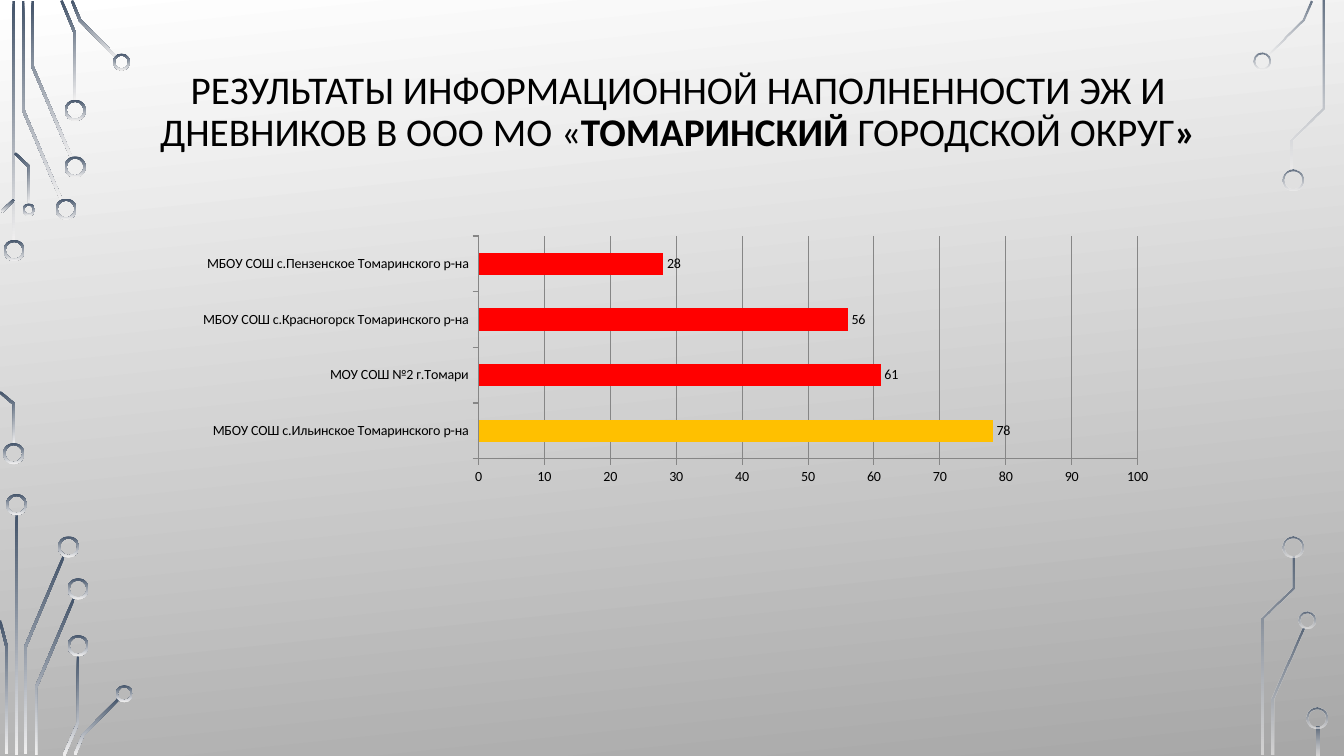
import math
from lxml import etree
from pptx import Presentation
from pptx import util as u
from pptx.chart import data as chart_data
from pptx.dml.color import RGBColor
from pptx.enum import chart as ch, shapes, text
from pptx.oxml import parse_xml
from pptx.oxml.ns import nsdecls, qn

THEME = {
    "font": "Calibri", "title_size": 28, "chart_size": 10, "ink": "000000",
    "grid": "868686", "low": "FF0000", "middle": "FFC000",
    "backdrop": ("FFFFFF", "A7A7A7"), "circuit": ("44546A", "F1F0F0"),
}
TITLE = [
    ("РЕЗУЛЬТАТЫ ИНФОРМАЦИОННОЙ НАПОЛНЕННОСТИ ЭЖ И ДНЕВНИКОВ В ООО МО «", False),
    ("ТОМАРИНСКИЙ", True), (" ГОРОДСКОЙ ОКРУГ", False), ("»", True),
]
SCHOOLS = [
    ("МБОУ СОШ с.Ильинское Томаринского р-на", 78),
    ("МОУ СОШ №2 г.Томари", 61),
    ("МБОУ СОШ с.Красногорск Томаринского р-на", 56),
    ("МБОУ СОШ с.Пензенское Томаринского р-на", 28),
]
LOW_LIMIT = 70
TITLE_BOX = (94.3, 35.3, 779.8, 90.7)
CHART_BOX = (131, 164.9, 702.7, 185)
PLOT_SHARE = {"x": 0.3, "y": 0.02, "w": 0.67, "h": 0.86}
TRACE_WIDTH, RING_WIDTH = 1.8, 1.45
BIG, SMALL, TINY = 15.1, 12.2, 9

LEFT_TRACES = [
    [(9.7, 0.7), (9.7, 172.8)],
    [(16.6, 0.7), (16.6, 78.5), (43.9, 142.9)],
    [(23.4, 0.7), (23.4, 47.9), (51.1, 112.7)],
    [(43.9, 0.4), (53.6, 23.8), (53.6, 72)],
    [(51.5, 0.4), (57.2, 14.6), (83.2, 41)],
    [(1.1, 151.2), (10.1, 142.6)],
    [(0, 280.1), (10.1, 288.7), (10.1, 317.5)],
    [(10.8, 109.4), (20.9, 119.2), (20.9, 146.2)],
    [(11.9, 367.2), (11.9, 539.3)],
    [(18.4, 538.6), (18.4, 461.5), (45.7, 397.1)],
    [(4.7, 538.6), (4.7, 461.5), (0, 443.2)],
    [(25.6, 539.3), (25.6, 491.4), (52.9, 427.3)],
    [(45.7, 539.6), (55.8, 516.2), (55.8, 468)],
    [(53.6, 538.9), (59.4, 524.9), (85, 499)],
]
LEFT_RINGS = [
    (10.1, 178.9, BIG), (9.8, 324, BIG), (47.2, 149.4, BIG), (53.7, 119.2, BIG),
    (53.7, 78.8, BIG), (86.8, 44.3, SMALL), (20.6, 149.8, TINY), (11.8, 360.4, BIG),
    (49, 390.6, BIG), (55.8, 420.6, BIG), (55.8, 461.2, BIG), (88.8, 495.5, SMALL),
]
RIGHT_TRACES = [
    [(905, 40), (930.6, 14), (936.4, 0.4)],
    [(909, 539.3), (909, 499.3), (931, 448.9)],
    [(923, 121.7), (923, 99.7), (945, 77.4), (945, 0.7)],
    [(901.8, 539.3), (901.8, 441.7), (924.1, 420.1), (924.1, 397.4)],
    [(941.4, 519.1), (941.4, 539.3)],
]
RIGHT_RINGS = [
    (901.3, 43.6, SMALL), (923.5, 128.5, BIG), (933.5, 443.2, SMALL),
    (923.8, 390.6, BIG), (940.7, 512.6, BIG),
]
CIRCUITS = [
    (LEFT_TRACES, LEFT_RINGS, (100, 100)),
    (RIGHT_TRACES, RIGHT_RINGS, (80, 60)),
]


def rgb(key):
    return RGBColor.from_string(THEME[key])


def set_gradient(fill, colours, angle):
    fill.gradient()
    fill.gradient_angle = 360 - angle
    for stop, colour in zip(fill.gradient_stops, colours):
        stop.color.rgb = RGBColor.from_string(colour)


def finish_circuit_part(part, opacity):
    part.shadow.inherit = False
    part.line.fill.background()
    set_gradient(part.fill, THEME["circuit"], 90)
    for colour, percent in zip(part._element.spPr.iter(qn("a:srgbClr")), opacity):
        if percent < 100:
            etree.SubElement(colour, qn("a:alpha")).set("val", str(percent * 1000))


def trace_outline(route, half):
    headings = [math.atan2(y2 - y1, x2 - x1)
                for (x1, y1), (x2, y2) in zip(route, route[1:])]
    sides = [], []
    for (x, y), before, after in zip(route, headings[:1] + headings, headings + headings[-1:]):
        turn = (after - before + math.pi) % (2 * math.pi) - math.pi
        normal = before + turn / 2 + math.pi / 2
        reach = half / math.cos(turn / 2)
        for side, sign in zip(sides, (1, -1)):
            side.append((u.Pt(x + sign * reach * math.cos(normal)),
                         u.Pt(y + sign * reach * math.sin(normal))))
    return sides[0] + sides[1][::-1]


def draw_circuit(slide, traces, rings, opacity):
    circuit = slide.shapes.add_group_shape().shapes
    for route in traces:
        start, *corners = trace_outline(route, TRACE_WIDTH / 2)
        builder = circuit.build_freeform(*start)
        builder.add_line_segments(corners, close=True)
        finish_circuit_part(builder.convert_to_shape(), opacity)
    for x, y, size in rings:
        ring = circuit.add_shape(
            shapes.MSO_SHAPE.DONUT,
            *map(u.Pt, (x - size / 2, y - size / 2, size, size)))
        ring.adjustments[0] = RING_WIDTH / size
        finish_circuit_part(ring, opacity)


def draw_title(slide):
    frame = slide.shapes.add_textbox(*map(u.Pt, TITLE_BOX)).text_frame
    frame.word_wrap = True
    frame.vertical_anchor = text.MSO_ANCHOR.MIDDLE
    heading = frame.paragraphs[0]
    heading.alignment = text.PP_ALIGN.CENTER
    heading.line_spacing = 0.9
    for words, bold in TITLE:
        run = heading.add_run()
        run.text = words
        run.font.bold = bold
        set_font(run.font, "title_size")


def set_font(font, size):
    font.name = THEME["font"]
    font.size = u.Pt(THEME[size])
    font.color.rgb = rgb("ink")


def draw_chart(slide):
    results = chart_data.CategoryChartData(number_format="#,##0")
    results.categories = [school for school, _ in SCHOOLS]
    results.add_series("Series 1", [score for _, score in SCHOOLS])
    chart = slide.shapes.add_chart(
        ch.XL_CHART_TYPE.BAR_CLUSTERED, *map(u.Pt, CHART_BOX), results).chart
    chart.has_legend = False
    chart.has_title = False
    set_font(chart.font, "chart_size")

    score_axis = chart.value_axis
    score_axis.minimum_scale, score_axis.maximum_scale = 0, 100
    score_axis.major_unit = 10
    score_axis.has_major_gridlines = True
    score_axis.tick_labels.number_format = "#,##0"
    score_axis.tick_labels.number_format_is_linked = False
    for axis in (chart.category_axis, score_axis):
        axis.major_tick_mark = ch.XL_TICK_MARK.OUTSIDE
        set_font(axis.tick_labels.font, "chart_size")
    for line in (chart.category_axis.format.line, score_axis.format.line,
                 score_axis.major_gridlines.format.line):
        line.color.rgb = rgb("grid")
        line.width = u.Pt(0.75)

    plot = chart.plots[0]
    plot.gap_width = 150
    plot.vary_by_categories = False
    bars = plot.series[0]
    bars.invert_if_negative = False
    bars.format.fill.solid()
    bars.format.fill.fore_color.rgb = rgb("middle")
    for index, (_, score) in enumerate(SCHOOLS):
        if score < LOW_LIMIT:
            fill = bars.points[index].format.fill
            fill.solid()
            fill.fore_color.rgb = rgb("low")
    labels = bars.data_labels
    labels.show_value = True
    labels.number_format = "#,##0"
    labels.number_format_is_linked = False
    labels.position = ch.XL_LABEL_POSITION.OUTSIDE_END
    set_font(labels.font, "chart_size")

    area = chart._chartSpace.find(".//" + qn("c:plotArea"))
    for layout in area.findall(qn("c:layout")):
        area.remove(layout)
    shares = "".join(f'<c:{side} val="{share}"/>' for side, share in PLOT_SHARE.items())
    area.insert(0, parse_xml(
        f'<c:layout {nsdecls("c")}><c:manualLayout><c:layoutTarget val="inner"/>'
        f'<c:xMode val="edge"/><c:yMode val="edge"/>{shares}</c:manualLayout></c:layout>'))


def main():
    deck = Presentation()
    deck.slide_width, deck.slide_height = u.Pt(960), u.Pt(540)
    slide = deck.slides.add_slide(deck.slide_layouts[6])
    set_gradient(slide.background.fill, THEME["backdrop"], 84)
    for traces, rings, opacity in CIRCUITS:
        draw_circuit(slide, traces, rings, opacity)
    draw_title(slide)
    draw_chart(slide)
    deck.save("out.pptx")


if __name__ == "__main__":
    main()
